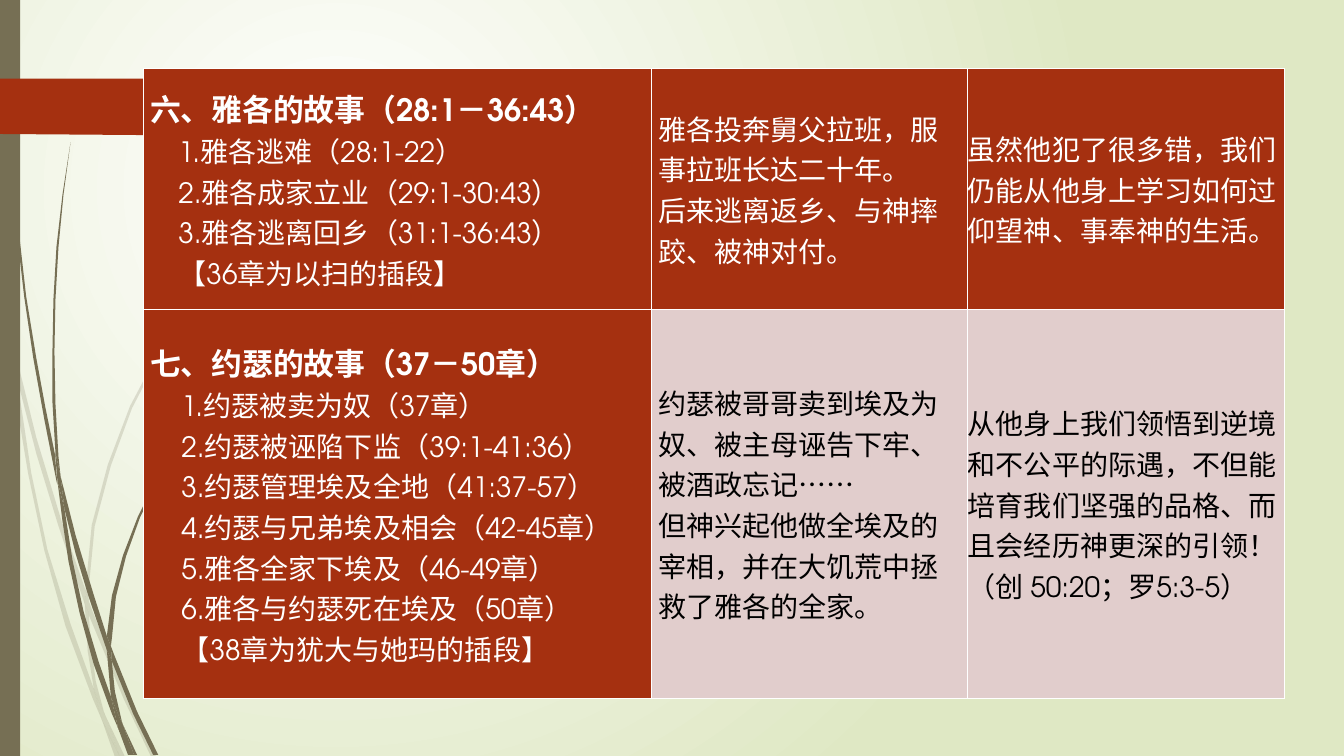
from lxml import etree
from pptx import Presentation
from pptx.dml.color import RGBColor
from pptx.enum import shapes, text
from pptx.oxml import parse_xml
from pptx.oxml.ns import nsdecls, qn
from pptx import util as u

PX = 9144  # EMU per pixel, at 100 pixels to the inch


class Theme:
    font = "TeX Gyre Adventor"
    heading, body = u.Pt(22), u.Pt(20)
    red = RGBColor(0xA5, 0x30, 0x10)
    pink = RGBColor(0xE1, 0xCD, 0xCC)
    olive = RGBColor(0x76, 0x6F, 0x54)
    green = RGBColor(0xDF, 0xE8, 0xC4)
    white = RGBColor(0xFF, 0xFF, 0xFF)
    black = RGBColor(0, 0, 0)


def px(n):
    return u.Emu(n * PX)


def paint(sp, color, alpha=100):
    sp.shadow.inherit = False
    sp.fill.solid()
    sp.fill.fore_color.rgb = color
    sp.line.fill.background()
    if alpha < 100:
        clr = sp.fill._xPr.find(qn("a:solidFill"))[0]
        etree.SubElement(clr, qn("a:alpha"), val=str(alpha * 1000))


prs = Presentation()
prs.slide_width, prs.slide_height = u.Inches(13.33), px(750)
s = prs.slides.add_slide(prs.slide_layouts[6])

# Background: circular gradient
bg = s.background.fill
bg.gradient()
for stop, color in zip(bg.gradient_stops, (Theme.white, Theme.green)):
    stop.color.rgb = color
lin = next(s.background._cSld.iter(qn("a:lin")))
lin.getparent().replace(lin, parse_xml(
    f'<a:path {nsdecls("a")} path="circle">'
    '<a:fillToRect l="50000" t="50000" r="100000" b="100000"/></a:path>'))

# Grass: a pale and a dark tuft, each blade an outline of corner points
pale_blades = [
    [(11, 350), (9, 322), (0, 282), (0, 299), (10, 344)],
    [(58, 522), (84, 599), (85, 586), (62, 520), (36, 434), (14, 345), (17, 376),
     (36, 450)],
    [(92, 607), (88, 596), (88, 610), (123, 694), (150, 751), (155, 751), (127, 692)],
    [(119, 751), (124, 751), (105, 711)],
    [(93, 683), (70, 619), (47, 545), (31, 469), (17, 376), (11, 350), (18, 410),
     (28, 470), (44, 546), (65, 621), (92, 693), (101, 714), (99, 707)],
    [(84, 599), (87, 646), (93, 683), (96, 692), (105, 711), (103, 706), (95, 676),
     (91, 646), (88, 610), (88, 608)],
    [(88, 584), (94, 522), (110, 462), (131, 405), (160, 349), (193, 296), (229, 245),
     (268, 198), (290, 175), (312, 154), (312, 153), (289, 175), (268, 197),
     (228, 244), (191, 295), (158, 348), (129, 403), (107, 461), (91, 521),
     (85, 584), (85, 586), (88, 596)],
    [(101, 714), (114, 751), (119, 751)],
    [(88, 608), (88, 610), (88, 596), (85, 586), (84, 599)],
    [(96, 692), (93, 683), (99, 707), (101, 714), (119, 751), (105, 711)],
]
dark_blades = [
    [(7, 110), (11, 171), (17, 233), (24, 294), (33, 355), (44, 416), (56, 477),
     (57, 481), (55, 457), (55, 453), (45, 404), (36, 355), (26, 294), (19, 232),
     (13, 171), (8, 109), (5, 48), (4, 0), (3, 0), (4, 48)],
    [(88, 592), (106, 645), (106, 633), (106, 631), (93, 590), (75, 531), (60, 472),
     (64, 505), (75, 549)],
    [(113, 649), (110, 641), (111, 656), (132, 708), (152, 749), (157, 749), (136, 706)],
    [(110, 691), (98, 657), (83, 607), (72, 556), (64, 505), (57, 477), (62, 517),
     (68, 557), (79, 608), (93, 659), (111, 708), (117, 722), (116, 717)],
    [(60, 472), (58, 453), (55, 401), (54, 349), (55, 297), (58, 245), (63, 193),
     (70, 141), (62, 193), (56, 245), (53, 297), (52, 349), (52, 399), (55, 449)],
    [(133, 749), (136, 749), (122, 719)],
    [(57, 477), (64, 505), (60, 472), (55, 449), (55, 453)],
    [(111, 633), (115, 592), (125, 552), (139, 513), (158, 476), (180, 440), (205, 406),
     (231, 374), (245, 359), (261, 344), (260, 344), (245, 358), (231, 373),
     (204, 405), (178, 439), (156, 474), (137, 512), (122, 551), (111, 591),
     (106, 631), (110, 641)],
    [(117, 722), (127, 749), (131, 749)],
    [(106, 645), (110, 691), (116, 706), (122, 719), (121, 716), (114, 686), (111, 656),
     (109, 651)],
    [(106, 645), (109, 651), (111, 656), (110, 641), (106, 631), (106, 633)],
    [(116, 706), (110, 691), (116, 717), (117, 722), (130, 749), (133, 749), (122, 719)],
]
for alpha, blades in ((20, pale_blades), (100, dark_blades)):
    tuft = s.shapes.add_group_shape()
    for corners in blades:
        builder = tuft.shapes.build_freeform(*corners[0], scale=PX)
        builder.add_line_segments(corners[1:], close=True)
        paint(builder.convert_to_shape(), Theme.olive, alpha)

# Side bar and red tag
paint(s.shapes.add_shape(shapes.MSO_SHAPE.RECTANGLE, 0, 0, px(20), px(750)), Theme.olive)
tag = s.shapes.build_freeform(173, 108, scale=PX)
tag.add_line_segments([(148, 133), (146, 134), (136, 134), (0, 133), (0, 78), (136, 78),
                       (146, 78), (148, 79), (173, 104), (174, 106)], close=True)
paint(tag.convert_to_shape(), Theme.red)

# Story table: fill, text colour, side inset, left margin, first-line indent, paragraphs
rows = [
    [(Theme.red, Theme.white, 7, 0, 28,
      ["六、雅各的故事（28:1－36:43）", "1.雅各逃难（28:1-22）", "2.雅各成家立业（29:1-30:43）",
       "3.雅各逃离回乡（31:1-36:43）", "【36章为以扫的插段】"]),
     (Theme.red, Theme.white, 7, 0, 0,
      ["雅各投奔舅父拉班，服事拉班长达二十年。", "后来逃离返乡、与神摔跤、被神对付。"]),
     (Theme.red, Theme.white, 0, 0, 0,
      ["虽然他犯了很多错，我们仍能从他身上学习如何过仰望神、事奉神的生活。"])],
    [(Theme.red, Theme.white, 7, 31, 0,
      ["七、约瑟的故事（37－50章）",
       "1.约瑟被卖为奴（37章）\v2.约瑟被诬陷下监（39:1-41:36）\v"
       "3.约瑟管理埃及全地（41:37-57）\v4.约瑟与兄弟埃及相会（42-45章）\v"
       "5.雅各全家下埃及（46-49章）\v6.雅各与约瑟死在埃及（50章）",
       "【38章为犹大与她玛的插段】"]),
     (Theme.pink, Theme.black, 7, 0, 0,
      ["约瑟被哥哥卖到埃及为奴、被主母诬告下牢、被酒政忘记……",
       "但神兴起他做全埃及的宰相，并在大饥荒中拯救了雅各的全家。"]),
     (Theme.pink, Theme.black, 0, 0, 0,
      ["从他身上我们领悟到逆境和不公平的际遇，不但能培育我们坚强的品格、"
       "而且会经历神更深的引领！（创 50:20；罗5:3-5）"])],
]
col_widths, row_heights = (504, 314, 314), (239, 386)
table = s.shapes.add_table(2, 3, px(142), px(68), px(sum(col_widths)),
                           px(sum(row_heights))).table
for col, width in zip(table.columns, col_widths):
    col.width = px(width)
for row, height, stories in zip(table.rows, row_heights, rows):
    row.height = px(height)
    for n, (cell, story) in enumerate(zip(row.cells, stories)):
        fill, color, inset, margin, indent, paragraphs = story
        cell.fill.solid()
        cell.fill.fore_color.rgb = fill
        cell.vertical_anchor = text.MSO_ANCHOR.MIDDLE
        cell.margin_left = cell.margin_right = px(inset)
        cell.margin_top = cell.margin_bottom = 0
        for i, side in enumerate("LRTB"):
            cell._tc.tcPr.insert(i, parse_xml(
                f'<a:ln{side} {nsdecls("a")} w="12700"><a:solidFill>'
                f'<a:srgbClr val="{Theme.white}"/></a:solidFill></a:ln{side}>'))
        tf = cell.text_frame
        for i, words in enumerate(paragraphs):
            p = tf.add_paragraph() if i else tf.paragraphs[0]
            p.text = words
            heading = n == 0 and i == 0
            if not heading:
                pPr = p._p.get_or_add_pPr()
                pPr.set("marL", str(px(margin)))
                pPr.set("indent", str(px(indent)))
            for r in p.runs:
                r.font.name = Theme.font
                r.font.size = Theme.heading if heading else Theme.body
                r.font.bold = heading
                r.font.color.rgb = color

prs.save("out.pptx")
